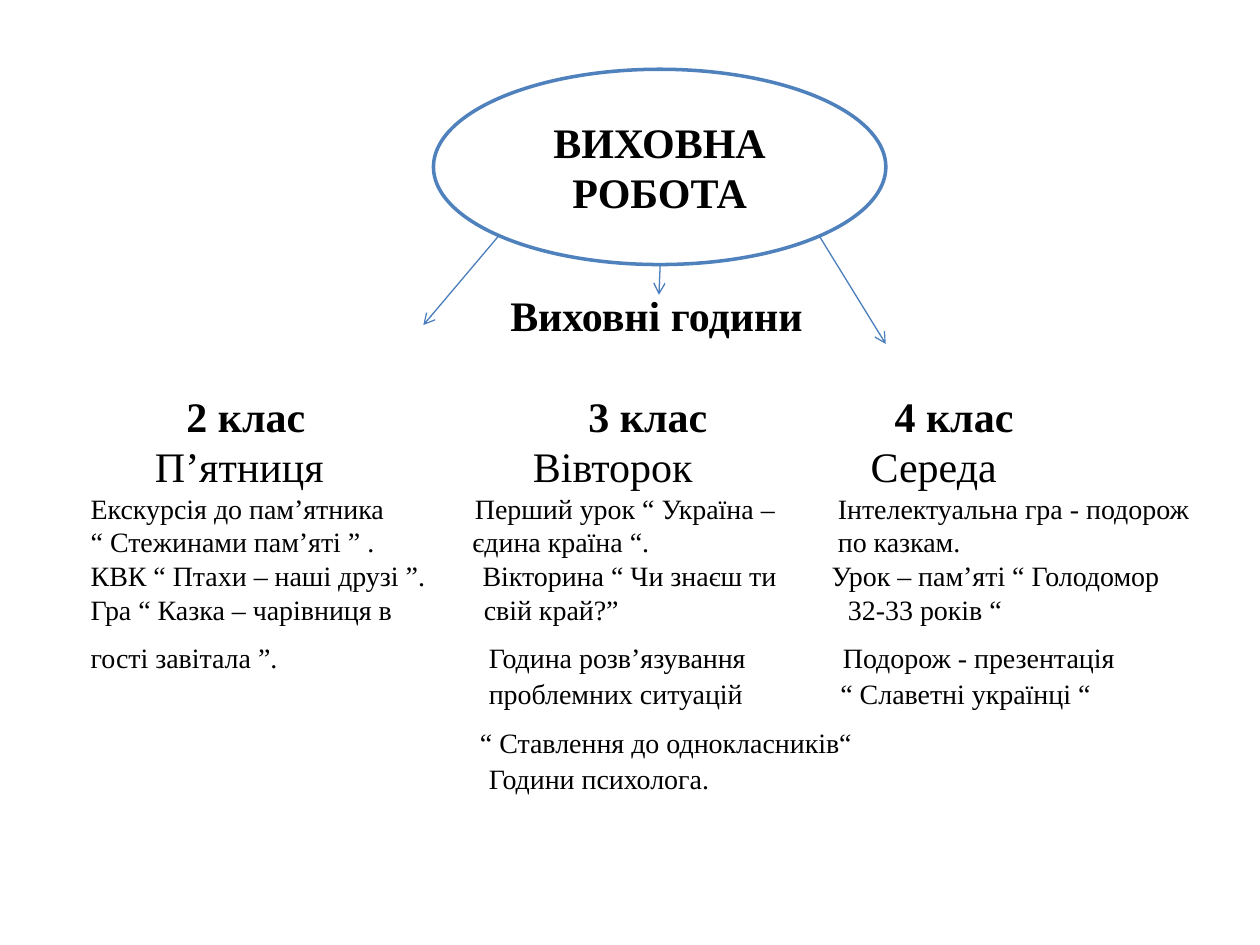
from pptx import Presentation, util as u
from pptx.dml.color import RGBColor as Rgb
from pptx.enum import shapes as sh, text as tx
from pptx.oxml.ns import qn
from lxml import etree

# Content: each column is (left, lines); a line is (indent, text, style, space before)
TOPIC = "ВИХОВНА РОБОТА"
HEAD = "Виховні години"
COLS = [
    (0.72, [
        (0.76, "2 клас", "head", 0),
        (0.51, "П’ятниця", "day", 0),
        (0, "Екскурсія до пам’ятника", "body", 0),
        (0, "“ Стежинами пам’яті ” .", "body", 0),
        (0, "КВК “ Птахи – наші друзі ”.", "body", 0),
        (0, "Гра “ Казка – чарівниця в", "body", 0),
        (0, "гості завітала ”.", "body", 8.5),
    ]),
    (3.75, [
        (0.92, "3 клас", "head", 0),
        (0.48, "Вівторок", "day", 0),
        (0.02, "Перший урок “ Україна –", "body", 0),
        (0, "єдина країна “.", "body", 0),
        (0.08, "Вікторина “ Чи знаєш ти", "body", 0),
        (0.09, "свій край?”", "body", 0),
        (0.13, "Година розв’язування", "body", 8.5),
        (0.13, "проблемних ситуацій", "body", 1.5),
        (0.06, "“ Ставлення до однокласників“", "body", 8.5),
        (0.13, "Години психолога.", "body", 1.5),
    ]),
    (6.6, [
        (0.5, "4 клас", "head", 0),
        (0.31, "Середа", "day", 0),
        (0.05, "Інтелектуальна гра - подорож", "body", 0),
        (0.05, "по казкам.", "body", 0),
        (0, "Урок – пам’яті “ Голодомор", "body", 0),
        (0.13, "32-33 років “", "body", 0),
        (0.09, "Подорож - презентація", "body", 8.5),
        (0.07, "“ Славетні українці “", "body", 1.5),
    ]),
]
ARROWS = [
    (3.96, 1.87, 3.36, 2.58),
    (6.5, 1.87, 7.03, 2.73),
    (5.24, 2.09, 5.23, 2.34),
]

THEME = {
    "ink": Rgb(0, 0, 0),
    "fill": Rgb(255, 255, 255),
    "edge": Rgb.from_string("4F81BD"),
    "arrow": Rgb.from_string("4B7EBC"),
    "head": {"name": "Times New Roman", "size": u.Pt(24), "bold": True},
    "day": {"name": "Times New Roman", "size": u.Pt(24), "bold": False},
    "body": {"name": "Times New Roman", "size": u.Pt(16), "bold": False},
}
MID = tx.PP_ALIGN.CENTER


def style(para, kind):
    for key, val in THEME[kind].items():
        setattr(para.font, key, val)
    para.font.color.rgb = THEME["ink"]


def add_box(slide, *area):
    frame = slide.shapes.add_textbox(*map(u.Inches, area)).text_frame
    frame.word_wrap = True
    for side in ("left", "right", "top", "bottom"):
        setattr(frame, "margin_" + side, 0)
    return frame


def add_col(slide, left, lines):
    frame = add_box(slide, left, 3.1, 3.1, 3.4)
    for n, (dent, words, kind, gap) in enumerate(lines):
        para = frame.add_paragraph() if n else frame.paragraphs[0]
        para.text = words
        if dent:
            para._p.get_or_add_pPr().set("marL", str(u.Inches(dent)))
        if gap:
            para.space_before = u.Pt(gap)
        style(para, kind)


def add_arrow(slide, *ends):
    line = slide.shapes.add_connector(sh.MSO_CONNECTOR.STRAIGHT, *map(u.Inches, ends))
    line.line.color.rgb = THEME["arrow"]
    line.line.width = u.Pt(0.75)
    etree.SubElement(line.line._get_or_add_ln(), qn("a:tailEnd"), type="arrow")
    etree.SubElement(line._element.spPr, qn("a:effectLst"))


def main():
    deck = Presentation()
    deck.slide_width, deck.slide_height = u.Inches(10), u.Inches(7.5)
    slide = deck.slides.add_slide(deck.slide_layouts[6])

    # Heading and class columns
    para = add_box(slide, 3.71, 2.3, 3, 0.4).paragraphs[0]
    para.text, para.alignment = HEAD, MID
    style(para, "head")
    for left, lines in COLS:
        add_col(slide, left, lines)

    # Topic oval
    oval = slide.shapes.add_shape(
        sh.MSO_SHAPE.OVAL, *map(u.Inches, (3.44, 0.55, 3.59, 1.55)))
    oval.shadow.inherit = False
    oval.fill.solid()
    oval.fill.fore_color.rgb = THEME["fill"]
    oval.line.color.rgb = THEME["edge"]
    oval.line.width = u.Pt(2)
    frame = oval.text_frame
    frame.word_wrap = True
    frame.vertical_anchor = tx.MSO_ANCHOR.MIDDLE
    para = frame.paragraphs[0]
    para.text, para.alignment = TOPIC, MID
    style(para, "head")

    # Arrows from the oval
    for ends in ARROWS:
        add_arrow(slide, *ends)

    deck.save("out.pptx")


if __name__ == "__main__":
    main()
